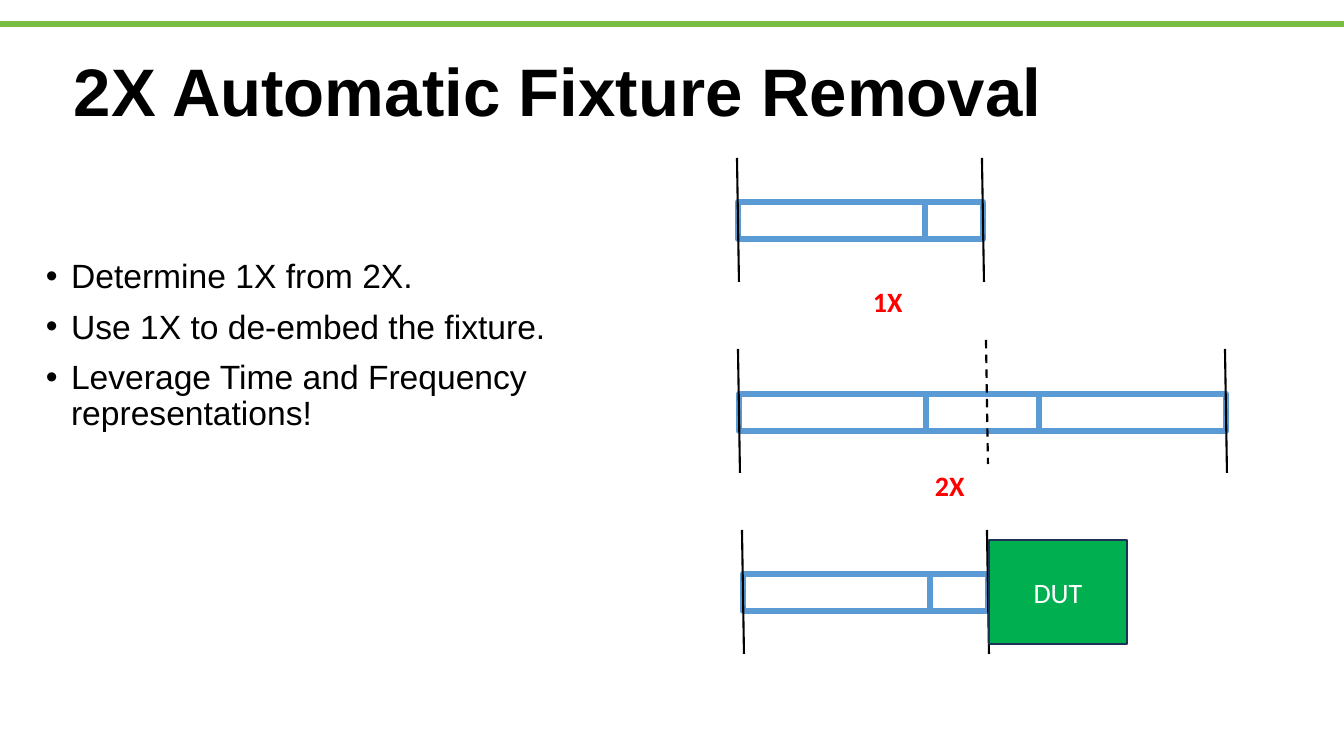
from pptx import Presentation
from pptx.dml.color import RGBColor
from pptx.enum.dml import MSO_LINE
from pptx.enum.shapes import MSO_CONNECTOR as CONNECTOR, MSO_SHAPE as SHAPE
from pptx.enum.text import MSO_ANCHOR as ANCHOR, PP_ALIGN as ALIGN
from pptx.oxml.ns import qn
from pptx.util import Emu, Pt
from lxml import etree

BLACK = RGBColor(0, 0, 0)
WHITE = RGBColor(255, 255, 255)
RED = RGBColor(255, 0, 0)
BAR_BLUE = RGBColor(0x5B, 0x9B, 0xD5)
RULE_GREEN = RGBColor(0x7B, 0xBC, 0x42)
DUT_GREEN = RGBColor(0x00, 0xB0, 0x50)
DUT_EDGE = RGBColor(0x1E, 0x32, 0x56)

TITLE = "2X Automatic Fixture Removal"
BULLETS = [
    "Determine 1X from 2X.",
    "Use 1X to de-embed the fixture.",
    "Leverage Time and Frequency representations!",
]
LONG, SHORT = 187, 58
BAR_HEIGHT = 37
BARS = [
    (738, 202, [LONG, SHORT]),
    (739, 394, [LONG, 2 * SHORT - 3, LONG]),
    (743, 574, [LONG, SHORT]),
]
TICK_SLANT, TICK_HEIGHT = 2, 124
TICKS = [
    (158, [737, 982], False),
    (349, [738, 1225], False),
    (340, [986], True),
    (530, [742, 987], False),
]
LABELS = [("1X", 863, 280), ("2X", 925, 464)]
DUT_BOX = (989, 540, 138, 104)


def px(value):
    return Emu(round(value * 914400 / 100.8))


def style_font(paragraph, name, size, color, bold=False):
    font = paragraph.font
    font.name, font.size, font.bold = name, Pt(size), bold
    font.color.rgb = color


def add_text(slide, box, lines, name, size, color, bold=False):
    frame = slide.shapes.add_textbox(*map(px, box)).text_frame
    frame.word_wrap = True
    frame.text = "\n".join(lines)
    for paragraph in frame.paragraphs:
        style_font(paragraph, name, size, color, bold)
    return frame


def add_bullet(paragraph):
    properties = paragraph._p.get_or_add_pPr()
    properties.set("marL", "228600")
    properties.set("indent", "-228600")
    bullet_font = etree.Element(qn("a:buFont"), typeface="Arial")
    bullet = etree.Element(qn("a:buChar"), char="•")
    properties.insert_element_before(bullet_font, "a:tabLst", "a:defRPr", "a:extLst")
    properties.insert_element_before(bullet, "a:tabLst", "a:defRPr", "a:extLst")


def add_box(slide, box, fill, edge, width):
    shape = slide.shapes.add_shape(SHAPE.RECTANGLE, *map(px, box))
    shape.shadow.inherit = False
    shape.fill.solid()
    shape.fill.fore_color.rgb = fill
    shape.line.color.rgb = edge
    shape.line.width = Pt(width)
    return shape


def add_line(slide, ends, color, width):
    connector = slide.shapes.add_connector(CONNECTOR.STRAIGHT, *map(px, ends))
    connector.line.color.rgb = color
    connector.line.width = Pt(width)
    etree.SubElement(connector._element.spPr, qn("a:effectLst"))
    return connector


def main():
    presentation = Presentation()
    presentation.slide_width, presentation.slide_height = px(1344), px(756)
    slide = presentation.slides.add_slide(presentation.slide_layouts[6])

    add_line(slide, (-2, 24, 1344, 24), RULE_GREEN, 4.5)

    title = add_text(slide, (64, 38, 1159, 114), [TITLE], "Arial", 48, BLACK, True)
    title.vertical_anchor = ANCHOR.MIDDLE
    title.paragraphs[0].line_spacing = 0.9

    body = add_text(slide, (36, 255, 646, 140), BULLETS, "Arial", 24, BLACK)
    for index, paragraph in enumerate(body.paragraphs):
        paragraph.line_spacing = 0.9
        paragraph.space_before = Pt(10 if index else 0)
        add_bullet(paragraph)

    for left, top, widths in BARS:
        for width in widths:
            add_box(slide, (left, top, width, BAR_HEIGHT), WHITE, BAR_BLUE, 4.5)
            left += width

    for top, lefts, dashed in TICKS:
        for left in lefts:
            ends = (left, top, left + TICK_SLANT, top + TICK_HEIGHT)
            tick = add_line(slide, ends, BLACK, 1.5)
            if dashed:
                tick.line.dash_style = MSO_LINE.DASH

    for text, left, top in LABELS:
        add_text(slide, (left, top, 75, 44), [text], "Calibri", 20, RED, True)

    dut = add_box(slide, DUT_BOX, DUT_GREEN, DUT_EDGE, 1)
    dut.text_frame.text = "DUT"
    dut.text_frame.vertical_anchor = ANCHOR.MIDDLE
    paragraph = dut.text_frame.paragraphs[0]
    paragraph.alignment = ALIGN.CENTER
    style_font(paragraph, "Calibri", 20, WHITE)

    presentation.save("out.pptx")


if __name__ == "__main__":
    main()
